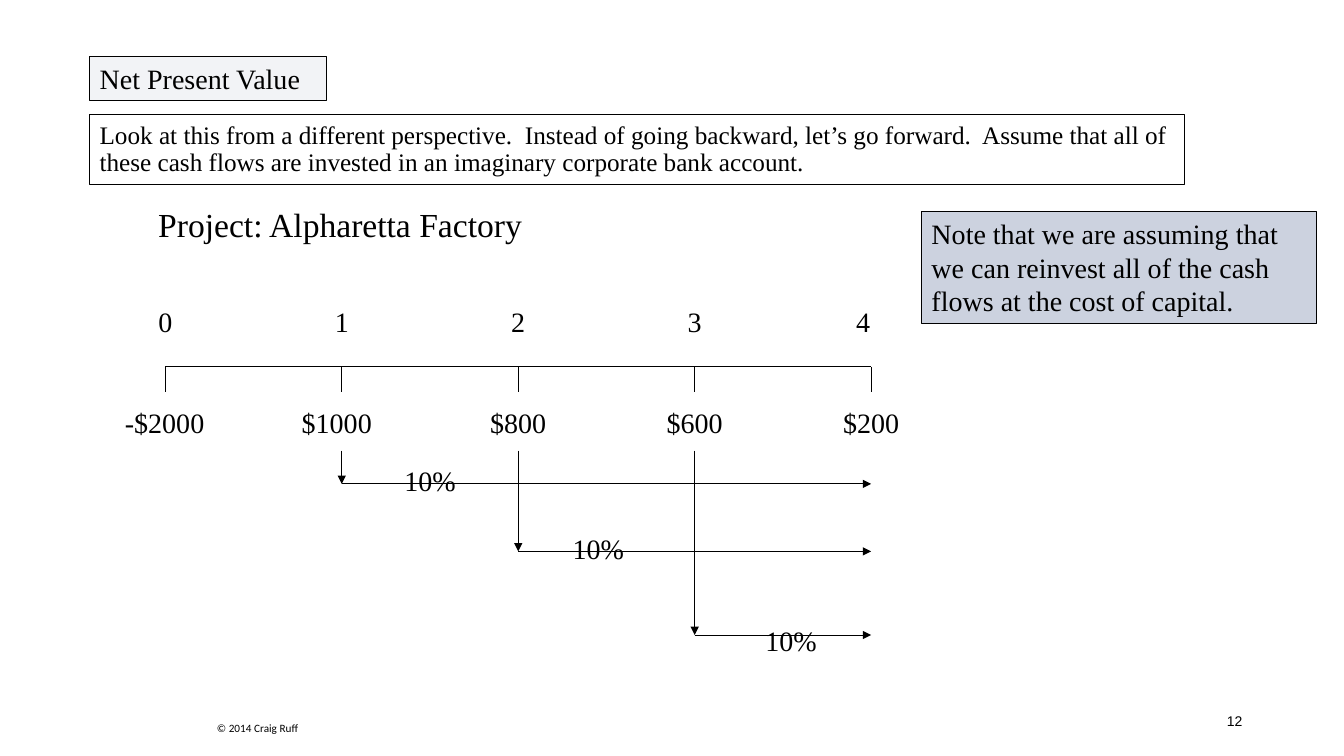
"""Builds the Net Present Value slide with a forward-looking cash flow timeline."""
import pptx
import pptx.util
import pptx.dml.color
import pptx.enum.shapes
import pptx.enum.text
import pptx.oxml
import pptx.oxml.ns
from dataclasses import dataclass

Inches = pptx.util.Inches
Pt = pptx.util.Pt
ALIGN = pptx.enum.text.PP_ALIGN
ANCHOR = pptx.enum.text.MSO_ANCHOR


@dataclass(frozen=True)
class Theme:
    ink: str = "000000"
    navy: str = "002060"
    serif: str = "Times New Roman"
    sans: str = "Arial"
    footer: str = "Calibri"
    heading: int = 24
    body: int = 20
    lead: int = 18
    number: int = 10
    credit: int = 8
    line: float = 0.75


THEME = Theme()

TOPIC = "Net Present Value"
LEAD = ("Look at this from a different perspective.  Instead of going backward, "
        "let’s go forward.  Assume that all of these cash flows are invested in "
        "an imaginary corporate bank account.")
PROJECT = "Project: Alpharetta Factory"
NOTE = ("Note that we are assuming that we can reinvest all of the cash flows "
        "at the cost of capital.")
CREDIT = "© 2014 Craig Ruff"
PAGE = "12"

# year, label centre offset, cash flow, cash centre offset, cash alignment
YEARS = [
    ("0", 0, "-$2000", 0.25, ALIGN.LEFT),
    ("1", 0, "$1000", -0.05, ALIGN.CENTER),
    ("2", 0, "$800", 0, ALIGN.CENTER),
    ("3", 0, "$600", 0, ALIGN.CENTER),
    ("4", -0.08, "$200", 0, ALIGN.CENTER),
]
# year, height of the arrow, rate, left and top of the rate
REINVESTED = [
    (1, 4.8, "10%", 3.64, 4.55),
    (2, 5.47, "10%", 5.31, 5.22),
    (3, 6.3, "10%", 7.22, 6.14),
]

AXIS_LEFT, AXIS_TOP, YEAR_STEP = 1.64, 3.64, 1.75
TICK, DROP_TOP = 0.25, 4.47
YEAR_TOP, CASH_TOP = 2.97, 3.97
YEAR_W, CASH_W, RATE_W, LABEL_H = 0.83, 1.5, 1.25, 0.44


def year_x(year):
    return AXIS_LEFT + year * YEAR_STEP


def color(value):
    return pptx.dml.color.RGBColor.from_string(value)


def write(sp, text, size, font=THEME.serif, align=ALIGN.LEFT, anchor=ANCHOR.TOP, spacing=None):
    tf = sp.text_frame
    tf.word_wrap = True
    tf.vertical_anchor = anchor
    tf.text = text
    p = tf.paragraphs[0]
    p.alignment = align
    if spacing:
        p.line_spacing = spacing
    r = p.runs[0]
    r.font.size = Pt(size)
    r.font.name = font
    r.font.color.rgb = color(THEME.ink)


def add_text(s, box, text, size=THEME.body, **style):
    write(s.shapes.add_textbox(*map(Inches, box)), text, size, **style)


def add_panel(s, box, text, size=THEME.body, opacity=None, **style):
    rect = pptx.enum.shapes.MSO_SHAPE.RECTANGLE
    sp = s.shapes.add_shape(rect, *map(Inches, box))
    sp.shadow.inherit = False
    sp.line.color.rgb = color(THEME.ink)
    sp.line.width = Pt(THEME.line)
    if opacity is None:
        sp.fill.background()
    else:
        sp.fill.solid()
        sp.fill.fore_color.rgb = color(THEME.navy)
        fill = sp._element.spPr.find(pptx.oxml.ns.qn("a:solidFill"))
        alpha = pptx.oxml.parse_xml(
            f'<a:alpha {pptx.oxml.ns.nsdecls("a")} val="{opacity * 1000}"/>')
        fill[0].append(alpha)
    write(sp, text, size, **style)


def add_line(s, x1, y1, x2, y2, arrow=False):
    straight = pptx.enum.shapes.MSO_CONNECTOR.STRAIGHT
    c = s.shapes.add_connector(straight, *map(Inches, (x1, y1, x2, y2)))
    c.line.color.rgb = color(THEME.ink)
    c.line.width = Pt(THEME.line)
    ns = pptx.oxml.ns.nsdecls("a")
    if arrow:
        head = pptx.oxml.parse_xml(f'<a:tailEnd {ns} type="triangle"/>')
        c.line._get_or_add_ln().append(head)
    c._element.spPr.append(pptx.oxml.parse_xml(f"<a:effectLst {ns}/>"))


def add_timeline(s):
    end = year_x(len(YEARS) - 1)
    add_line(s, AXIS_LEFT, AXIS_TOP, end, AXIS_TOP)
    for i, (year, year_shift, cash, cash_shift, align) in enumerate(YEARS):
        x = year_x(i)
        add_line(s, x, AXIS_TOP, x, AXIS_TOP + TICK)
        add_text(s, (x + year_shift - YEAR_W / 2, YEAR_TOP, YEAR_W, LABEL_H),
                 year, align=ALIGN.CENTER)
        add_text(s, (x + cash_shift - CASH_W / 2, CASH_TOP, CASH_W, LABEL_H),
                 cash, align=align)
    for year, y, rate, left, top in REINVESTED:
        x = year_x(year)
        add_line(s, x, DROP_TOP, x, y, arrow=True)
        add_line(s, x, y, end, y, arrow=True)
        add_text(s, (left, top, RATE_W, LABEL_H), rate, align=ALIGN.CENTER)


def main():
    prs = pptx.Presentation()
    prs.slide_width, prs.slide_height = Inches(13.33), Inches(7.5)
    s = prs.slides.add_slide(prs.slide_layouts[6])
    add_panel(s, (0.89, 1.14, 10.86, 0.69), LEAD, THEME.lead,
              anchor=ANCHOR.MIDDLE, spacing=0.9)
    add_text(s, (1.47, 1.97, 4.25, 0.5), PROJECT, THEME.heading)
    add_timeline(s)
    add_text(s, (9.42, 6.95, 3, 0.4), PAGE, THEME.number, font=THEME.sans,
             align=ALIGN.RIGHT, anchor=ANCHOR.MIDDLE)
    add_panel(s, (9.14, 2.1, 3.92, 1.11), NOTE, opacity=20)
    add_panel(s, (0.89, 0.56, 2.35, 0.44), TOPIC, opacity=5)
    add_text(s, (1.95, 7.11, 1.21, 0.24), CREDIT, THEME.credit,
             font=THEME.footer, align=ALIGN.CENTER)
    prs.save("out.pptx")


if __name__ == "__main__":
    main()
